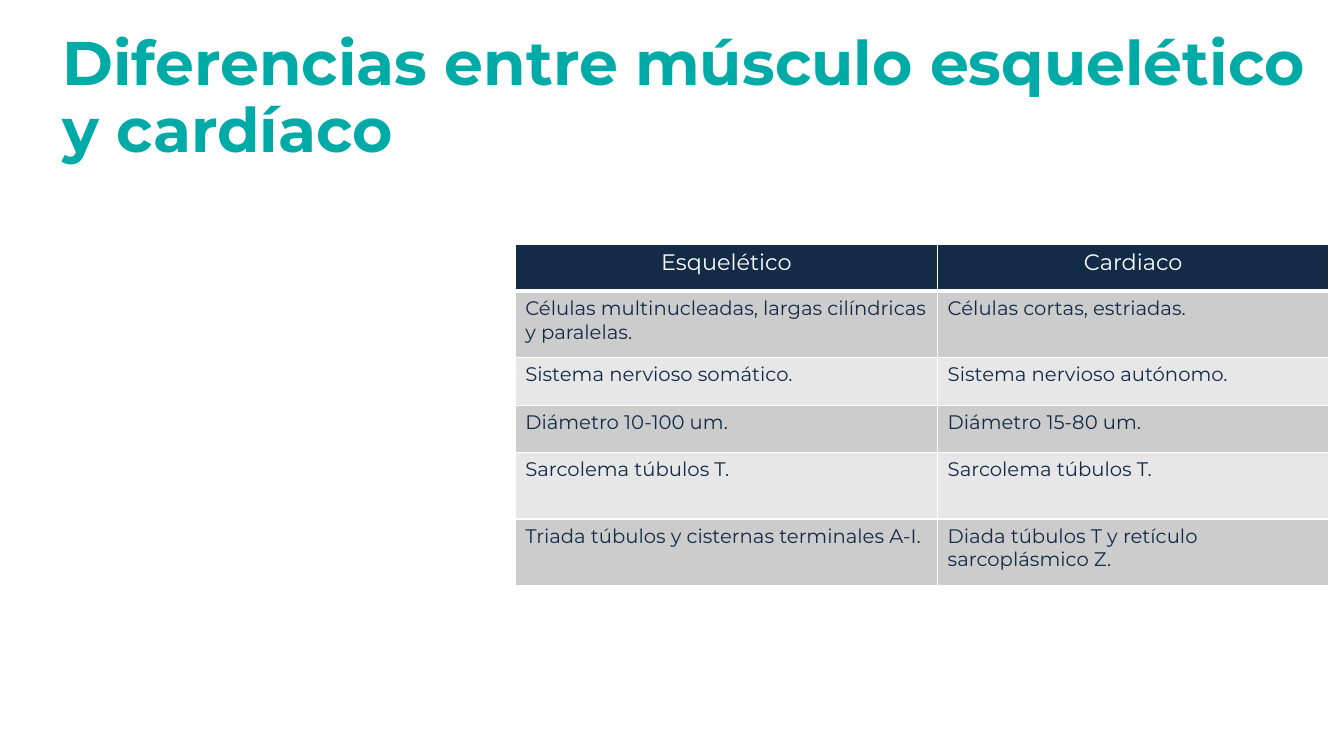
from dataclasses import dataclass

from lxml import etree
from pptx import Presentation
from pptx import util as u
from pptx.dml.color import RGBColor
from pptx.enum import text
from pptx.oxml import ns

FONT = "Montserrat"
COLORS = {
    "teal": "00AAA7",
    "navy": "142B48",
    "white": "FFFFFF",
    "dark_band": "CCCCCC",
    "light_band": "E7E7E7",
}


@dataclass
class Row:
    skeletal: str
    cardiac: str
    height: float = 0.47


@dataclass
class RowStyle:
    size: int
    ink: str
    fill: str
    align: text.PP_ALIGN
    bottom_border: int = 1


COLUMN_WIDTHS = (4.19, 3.88)
ROWS = [
    Row("Esquelético", "Cardiaco"),
    Row("Células multinucleadas, largas cilíndricas y paralelas.",
        "Células cortas, estriadas.", 0.66),
    Row("Sistema nervioso somático.", "Sistema nervioso autónomo."),
    Row("Diámetro 10-100 um.", "Diámetro 15-80 um."),
    Row("Sarcolema túbulos T.", "Sarcolema túbulos T.", 0.66),
    Row("Triada túbulos y cisternas terminales A-I.",
        "Diada túbulos T y retículo sarcoplásmico Z.", 0.66),
]
HEADER = RowStyle(16, "white", "navy", text.PP_ALIGN.CENTER, 3)
BANDS = [
    RowStyle(14, "navy", "light_band", text.PP_ALIGN.LEFT),
    RowStyle(14, "navy", "dark_band", text.PP_ALIGN.LEFT),
]


def format_runs(paragraph, size: int, ink: str, bold: bool = False) -> None:
    for run in paragraph.runs:
        run.font.name = FONT
        run.font.size = u.Pt(size)
        run.font.bold = bold
        run.font.color.rgb = RGBColor.from_string(COLORS[ink])


def add_borders(cell, bottom: int) -> None:
    properties = cell._tc.get_or_add_tcPr()
    widths = {"lnL": 1, "lnR": 1, "lnT": 1, "lnB": bottom}
    for position, (side, points) in enumerate(widths.items()):
        line = etree.Element(ns.qn(f"a:{side}"), w=str(u.Pt(points)))
        fill = etree.SubElement(line, ns.qn("a:solidFill"))
        etree.SubElement(fill, ns.qn("a:srgbClr"), val=COLORS["white"])
        properties.insert(position, line)


def fill_cell(cell, wording: str, style: RowStyle) -> None:
    cell.text_frame.text = wording
    paragraph = cell.text_frame.paragraphs[0]
    paragraph.alignment = style.align
    format_runs(paragraph, style.size, style.ink)
    cell.fill.solid()
    cell.fill.fore_color.rgb = RGBColor.from_string(COLORS[style.fill])
    add_borders(cell, style.bottom_border)


def add_title(slide) -> None:
    title = slide.shapes.add_textbox(
        u.Inches(0.52), u.Inches(0.26), u.Inches(12.82), u.Inches(1.45))
    frame = title.text_frame
    frame.word_wrap = True
    frame.vertical_anchor = text.MSO_ANCHOR.MIDDLE
    frame.text = "Diferencias entre músculo esquelético y cardíaco"
    frame.paragraphs[0].line_spacing = 0.9
    format_runs(frame.paragraphs[0], 44, "teal", bold=True)


def add_comparison(slide) -> None:
    comparison = slide.shapes.add_table(
        len(ROWS), len(COLUMN_WIDTHS), u.Inches(5.11), u.Inches(2.42),
        u.Inches(sum(COLUMN_WIDTHS)),
        u.Inches(sum(row.height for row in ROWS))).table
    for column, width in zip(comparison.columns, COLUMN_WIDTHS):
        column.width = u.Inches(width)
    for index, row in enumerate(ROWS):
        comparison.rows[index].height = u.Inches(row.height)
        style = BANDS[index % 2] if index else HEADER
        for column, wording in enumerate((row.skeletal, row.cardiac)):
            fill_cell(comparison.cell(index, column), wording, style)


def main() -> None:
    deck = Presentation()
    deck.slide_width = u.Inches(13.33)
    deck.slide_height = u.Inches(7.5)
    slide = deck.slides.add_slide(deck.slide_layouts[6])

    # Heading
    add_title(slide)

    # Skeletal and cardiac muscle side by side
    add_comparison(slide)

    deck.save("out.pptx")


if __name__ == "__main__":
    main()
